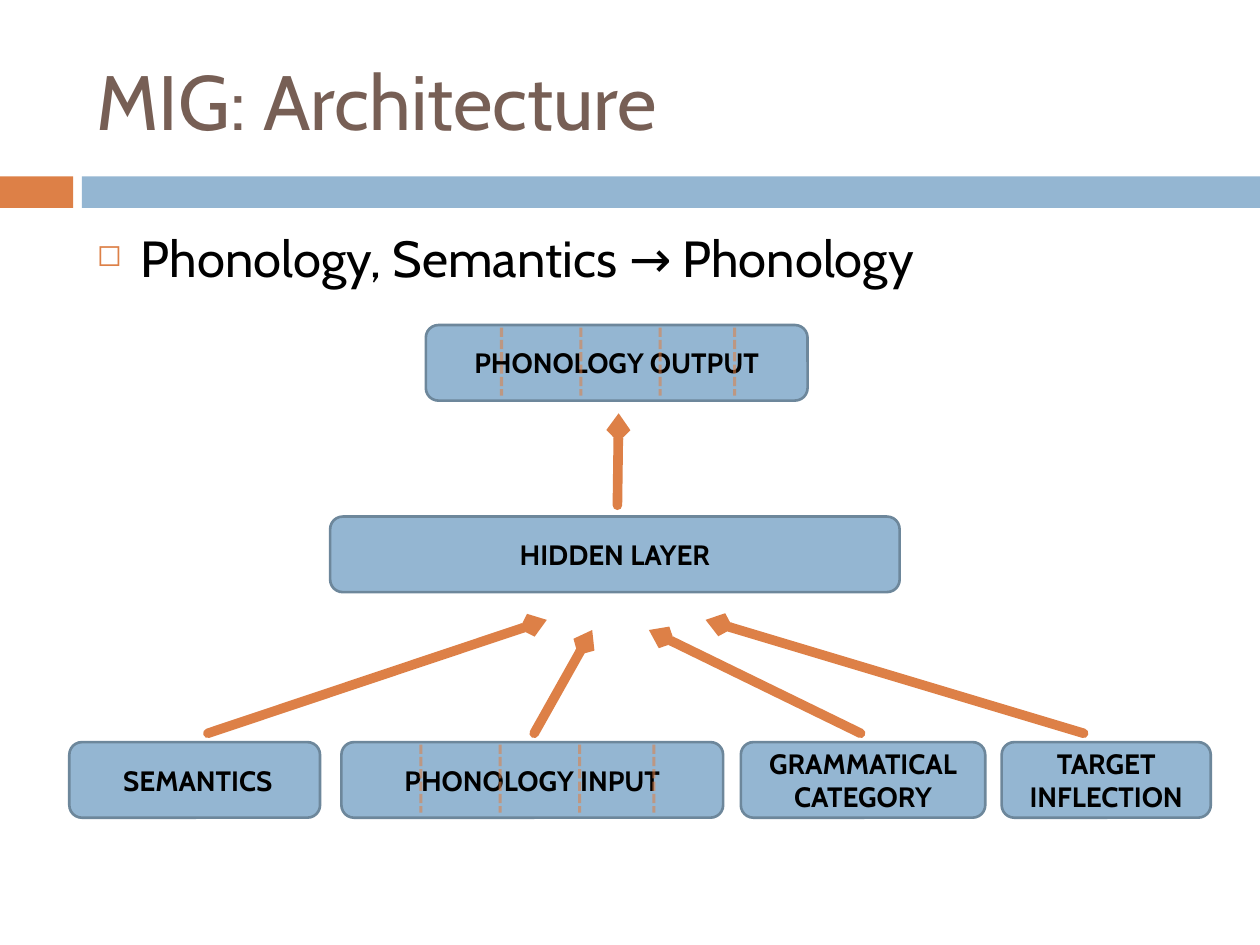
import lxml.etree
import pptx
import pptx.dml.color
import pptx.enum.shapes
import pptx.enum.text
import pptx.oxml.ns
import pptx.util
from pptx.util import Inches

FONT = "Cabin"
ORANGE = "DD8047"
BLUE = "94B6D2"
EDGE = "6D879B"
BROWN = "775F55"
BLACK = "000000"
LAYER_HEIGHT = 0.6
INPUT_TOP = 5.89
OUTPUT_TOP = 2.58
DIVIDER_OFFSETS = (0.63, 1.26, 1.89, 2.48)


def color(value):
    return pptx.dml.color.RGBColor.from_string(value)


def add_xml(parent, tag, **attributes):
    return lxml.etree.SubElement(parent, pptx.oxml.ns.qn(tag), attributes)


def add_span(para, text, size, fill, bold=False):
    span = para.add_run()
    span.text = text
    span.font.name = FONT
    span.font.size = pptx.util.Pt(size)
    span.font.bold = bold
    span.font.color.rgb = color(fill)


def add_block(page, kind, left, top, width, height, fill):
    block = page.shapes.add_shape(
        kind, Inches(left), Inches(top), Inches(width), Inches(height))
    block.shadow.inherit = False
    block.fill.solid()
    block.fill.fore_color.rgb = color(fill)
    block.line.fill.background()
    return block


def add_layer(page, text, left, top, width):
    kind = pptx.enum.shapes.MSO_SHAPE.ROUNDED_RECTANGLE
    layer = add_block(page, kind, left, top, width, LAYER_HEIGHT, BLUE)
    layer.line.color.rgb = color(EDGE)
    layer.line.width = pptx.util.Pt(1.5)
    frame = layer.text_frame
    frame.word_wrap = True
    frame.vertical_anchor = pptx.enum.text.MSO_ANCHOR.MIDDLE
    para = frame.paragraphs[0]
    para.alignment = pptx.enum.text.PP_ALIGN.CENTER
    add_span(para, text, 16, BLACK, bold=True)


def add_line(page, start, end, width):
    line = page.shapes.add_connector(
        pptx.enum.shapes.MSO_CONNECTOR.STRAIGHT,
        *(Inches(length) for length in (*start, *end)))
    line.line.color.rgb = color(ORANGE)
    line.line.width = pptx.util.Pt(width)
    add_xml(line._element.spPr, "a:effectLst")
    return line.line._get_or_add_ln()


def add_arrow(page, start, end):
    outline = add_line(page, start, end, 5.5)
    outline.set("cap", "rnd")
    add_xml(outline, "a:tailEnd", type="arrow", w="sm", len="sm")


def add_dividers(page, left, top):
    for offset in DIVIDER_OFFSETS:
        x = left + offset
        outline = add_line(page, (x, top + 0.02), (x, top + 0.56), 1.75)
        shade = outline.find(".//" + pptx.oxml.ns.qn("a:srgbClr"))
        add_xml(shade, "a:alpha", val="56000")
        add_xml(outline, "a:prstDash", val="sysDash")


def add_text(page, text, top, height, size, fill, anchor):
    box = page.shapes.add_textbox(
        Inches(0.67), Inches(top), Inches(8.92), Inches(height))
    frame = box.text_frame
    frame.word_wrap = True
    frame.vertical_anchor = anchor
    para = frame.paragraphs[0]
    add_span(para, text, size, fill)
    return para


def add_bullet(para):
    para.space_before = pptx.util.Pt(7)
    properties = para._p.get_or_add_pPr()
    properties.set("marL", str(Inches(0.35)))
    properties.set("indent", str(-Inches(0.35)))
    add_xml(add_xml(properties, "a:buClr"), "a:srgbClr", val=ORANGE)
    add_xml(properties, "a:buSzPct", val="60000")
    add_xml(properties, "a:buChar", char="◻")


def main():
    deck = pptx.Presentation()
    deck.slide_width, deck.slide_height = Inches(10), Inches(7.5)
    page = deck.slides.add_slide(deck.slide_layouts[6])
    anchors = pptx.enum.text.MSO_ANCHOR

    for left, width, fill in ((0, 0.58, ORANGE), (0.65, 9.35, BLUE)):
        add_block(page, pptx.enum.shapes.MSO_SHAPE.RECTANGLE,
                  left, 1.4, width, 0.25, fill)
    add_text(page, "MIG: Architecture", 0.25, 1.08, 44, BROWN, anchors.MIDDLE)

    add_layer(page, "HIDDEN LAYER", 2.62, 4.1, 4.52)
    for text, left, width in (
        (" SEMANTICS", 0.55, 1.99),
        ("PHONOLOGY INPUT", 2.71, 3.03),
        ("GRAMMATICAL CATEGORY", 5.88, 1.94),
        ("TARGET INFLECTION", 7.95, 1.66),
    ):
        add_layer(page, text, left, INPUT_TOP, width)

    for start, end in (
        ((1.65, 5.82), (4.34, 4.92)),
        ((4.24, 5.82), (4.7, 5)),
        ((6.83, 5.82), (5.15, 5)),
        ((8.6, 5.82), (5.6, 4.92)),
        ((4.9, 4.01), (4.91, 3.28)),
    ):
        add_arrow(page, start, end)

    add_layer(page, "PHONOLOGY OUTPUT", 3.38, OUTPUT_TOP, 3.03)
    add_dividers(page, 2.71, INPUT_TOP)
    add_dividers(page, 3.35, OUTPUT_TOP)

    add_bullet(add_text(page, "Phonology, Semantics → Phonology",
                        1.75, 5.59, 29, BLACK, anchors.TOP))
    deck.save("out.pptx")


if __name__ == "__main__":
    main()
